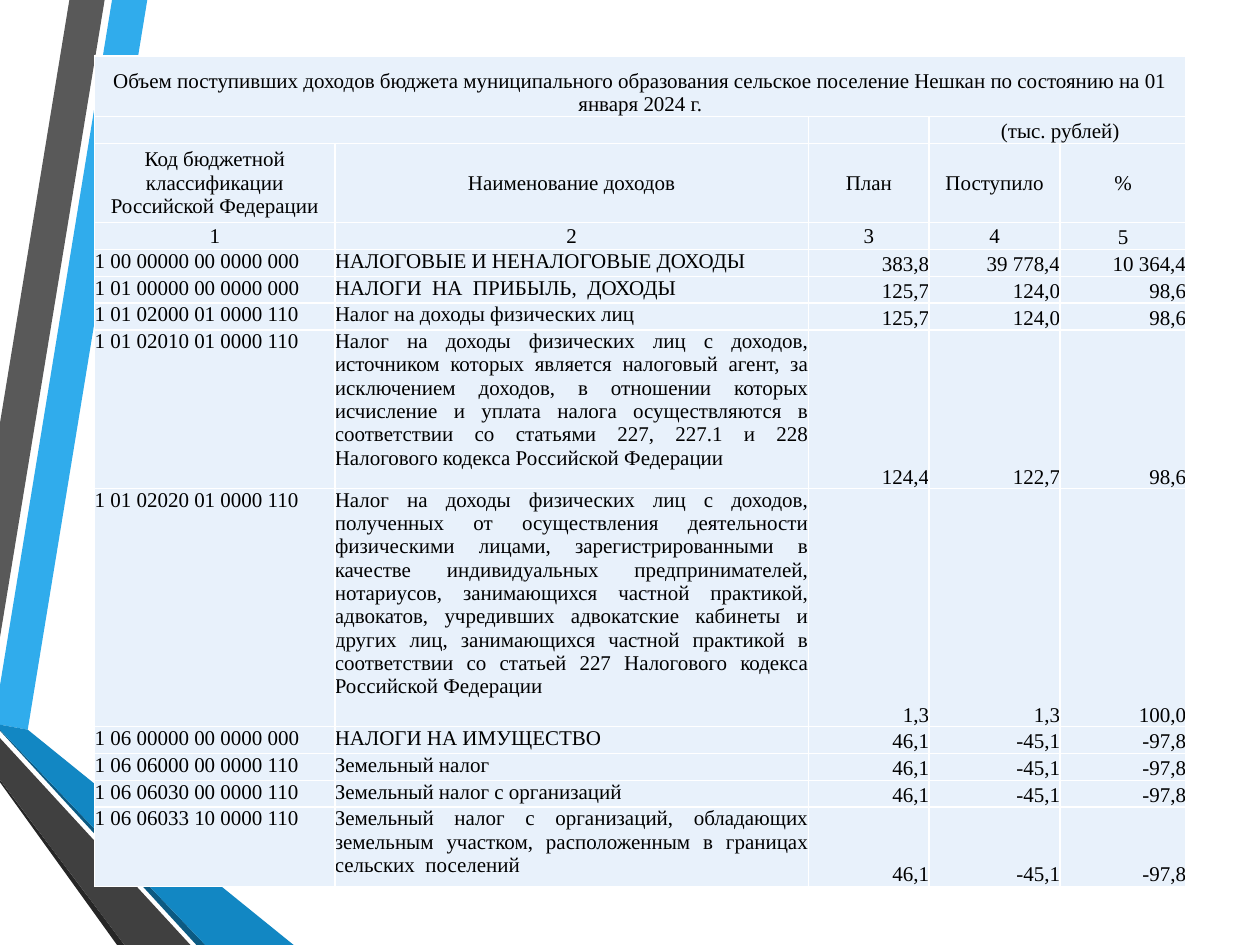
from dataclasses import dataclass
from typing import NamedTuple

from lxml.etree import SubElement
from pptx import Presentation
from pptx.dml.color import RGBColor
from pptx.enum.text import MSO_ANCHOR as Anchor, PP_ALIGN as Align
from pptx.oxml.ns import qn
from pptx.util import Cm, Pt


@dataclass(frozen=True)
class Theme:
    font: str = "Times New Roman"
    text_size: int = 12
    text: str = "000000"
    cell: str = "E8F1FB"
    border: str = "FFFFFF"
    border_width: float = 1
    sky: str = "30ACEC"
    blue: str = "1287C3"
    deep_blue: str = "0C5A82"
    grey: str = "595959"
    dark_grey: str = "404040"
    black: str = "262626"


class Ribbon(NamedTuple):
    color: str
    points: list[tuple[float, float]]


class CellStyle(NamedTuple):
    align: Align
    anchor: Anchor


class Income(NamedTuple):
    code: str
    name: str
    plan: str
    received: str
    percent: str
    height: float = 0.54


THEME = Theme()
WIDTH, HEIGHT = 25.4, 19.05
TABLE_LEFT, TABLE_TOP = 1.91, 1.13
COLUMN_WIDTHS = [4.84, 9.55, 2.43, 2.64, 2.54]
HEADING_HEIGHTS = [1.22, 0.54, 1.6, 0.54]

CENTERED = CellStyle(Align.CENTER, Anchor.MIDDLE)
CENTERED_LOW = CellStyle(Align.CENTER, Anchor.BOTTOM)
INCOME_STYLES = [
    CellStyle(Align.LEFT, Anchor.TOP),
    CellStyle(Align.JUSTIFY, Anchor.TOP),
    *[CellStyle(Align.RIGHT, Anchor.BOTTOM)] * 3,
]

RIBBONS = [
    Ribbon(THEME.sky, [(0, 13.82), (0, 14.61), (0.56, 14.71), (2.97, 0), (2.26, 0)]),
    Ribbon(THEME.grey, [(2.11, 0), (1.4, 0), (0, 8.53), (0, 12.85)]),
    Ribbon(THEME.black, [(0, 15.72), (0, 15.77), (2.36, HEIGHT), (2.51, HEIGHT)]),
    Ribbon(THEME.deep_blue, [(0, 14.71), (0, 14.73), (3.96, HEIGHT), (4.14, HEIGHT)]),
    Ribbon(THEME.blue, [(0, 14.71), (4.14, HEIGHT), (5.92, HEIGHT), (0.56, 14.71), (0, 14.61)]),
    Ribbon(THEME.dark_grey, [(0, 15.72), (2.51, HEIGHT), (3.84, HEIGHT), (0, 14.88)]),
]

TITLE = (
    "Объем поступивших доходов бюджета муниципального образования "
    "сельское поселение Нешкан по состоянию на 01 января 2024 г."
)
UNITS = " (тыс. рублей)"
HEADERS = [
    "Код бюджетной классификации Российской Федерации",
    "Наименование доходов", "План", "Поступило", "%",
]
INCOMES = [
    Income("1 00 00000 00 0000 000", "НАЛОГОВЫЕ И НЕНАЛОГОВЫЕ ДОХОДЫ", "383,8", "39 778,4", "10 364,4"),
    Income("1 01 00000 00 0000 000", "НАЛОГИ  НА  ПРИБЫЛЬ,  ДОХОДЫ", "125,7", "124,0", "98,6"),
    Income("1 01 02000 01 0000 110", "Налог на доходы физических лиц", "125,7", "124,0", "98,6"),
    Income(
        "1 01 02010 01 0000 110",
        "Налог на доходы физических лиц с доходов, источником которых является "
        "налоговый агент, за исключением доходов, в отношении которых исчисление "
        "и уплата налога осуществляются в соответствии со статьями 227, 227.1 и 228 "
        "Налогового кодекса Российской Федерации",
        "124,4", "122,7", "98,6", 3.2,
    ),
    Income(
        "1 01 02020 01 0000 110",
        "Налог на доходы физических лиц с доходов, полученных от осуществления "
        "деятельности физическими лицами, зарегистрированными в качестве "
        "индивидуальных предпринимателей, нотариусов, занимающихся частной "
        "практикой, адвокатов, учредивших адвокатские кабинеты и других лиц, "
        "занимающихся частной практикой в соответствии со статьей 227 "
        "Налогового кодекса Российской Федерации",
        "1,3", "1,3", "100,0", 4.8,
    ),
    Income("1 06 00000 00 0000 000", "НАЛОГИ НА ИМУЩЕСТВО", "46,1", "-45,1", "-97,8"),
    Income("1 06 06000 00 0000 110", "Земельный налог ", "46,1", "-45,1", "-97,8"),
    Income("1 06 06030 00 0000 110", "Земельный налог с организаций ", "46,1", "-45,1", "-97,8"),
    Income(
        "1 06 06033 10 0000 110",
        "Земельный налог с организаций, обладающих земельным участком, "
        "расположенным в границах сельских  поселений",
        "46,1", "-45,1", "-97,8", 1.6,
    ),
]


def draw_ribbon(shapes, ribbon: Ribbon) -> None:
    points = [(Cm(x), Cm(y)) for x, y in ribbon.points]
    builder = shapes.build_freeform(*points[0])
    builder.add_line_segments(points[1:], close=True)
    shape = builder.convert_to_shape()
    shape.shadow.inherit = False
    shape.fill.solid()
    shape.fill.fore_color.rgb = RGBColor.from_string(ribbon.color)
    shape.line.fill.background()


def format_cell(cell) -> None:
    """Give a cell its borders, fill and zero margins, and its empty text the table's size."""
    properties = cell._tc.get_or_add_tcPr()
    for side in ("a:lnL", "a:lnR", "a:lnT", "a:lnB"):
        line = SubElement(properties, qn(side), w=str(Pt(THEME.border_width)))
        SubElement(SubElement(line, qn("a:solidFill")), qn("a:srgbClr"), val=THEME.border)
    cell.fill.solid()
    cell.fill.fore_color.rgb = RGBColor.from_string(THEME.cell)
    cell.margin_left = cell.margin_right = cell.margin_top = cell.margin_bottom = 0
    SubElement(cell.text_frame.paragraphs[0]._p, qn("a:endParaRPr"), sz=str(THEME.text_size * 100))


def write_cell(cell, text: str, style: CellStyle) -> None:
    cell.vertical_anchor = style.anchor
    paragraph = cell.text_frame.paragraphs[0]
    paragraph.text = text
    paragraph.alignment = style.align
    for run in paragraph.runs:
        run.font.name = THEME.font
        run.font.size = Pt(THEME.text_size)
        run.font.color.rgb = RGBColor.from_string(THEME.text)


def draw_income_table(shapes) -> None:
    heights = HEADING_HEIGHTS + [income.height for income in INCOMES]
    frame = shapes.add_table(
        len(heights), len(COLUMN_WIDTHS), Cm(TABLE_LEFT), Cm(TABLE_TOP),
        Cm(sum(COLUMN_WIDTHS)), Cm(sum(heights)),
    )
    table = frame.table
    table.first_row = table.horz_banding = False
    for column, width in zip(table.columns, COLUMN_WIDTHS):
        column.width = Cm(width)
    for row, height in zip(table.rows, heights):
        row.height = Cm(height)
    for cell in table.iter_cells():
        format_cell(cell)

    for row, first, last in ((0, 0, 4), (1, 0, 1), (1, 3, 4)):
        table.cell(row, first).merge(table.cell(row, last))
    write_cell(table.cell(0, 0), TITLE, CENTERED_LOW)
    write_cell(table.cell(1, 3), UNITS, CENTERED_LOW)
    for column, header in enumerate(HEADERS):
        is_last = column == len(HEADERS) - 1
        write_cell(table.cell(2, column), header, CENTERED)
        write_cell(table.cell(3, column), str(column + 1), CENTERED_LOW if is_last else CENTERED)
    for row, income in enumerate(INCOMES, start=len(HEADING_HEIGHTS)):
        for column, (text, style) in enumerate(zip(income, INCOME_STYLES)):
            write_cell(table.cell(row, column), text, style)


def main() -> None:
    presentation = Presentation()
    presentation.slide_width, presentation.slide_height = Cm(WIDTH), Cm(HEIGHT)
    slide = presentation.slides.add_slide(presentation.slide_layouts[6])
    ribbons = slide.shapes.add_group_shape()
    for ribbon in RIBBONS:
        draw_ribbon(ribbons.shapes, ribbon)
    draw_income_table(slide.shapes)
    presentation.save("out.pptx")


if __name__ == "__main__":
    main()
